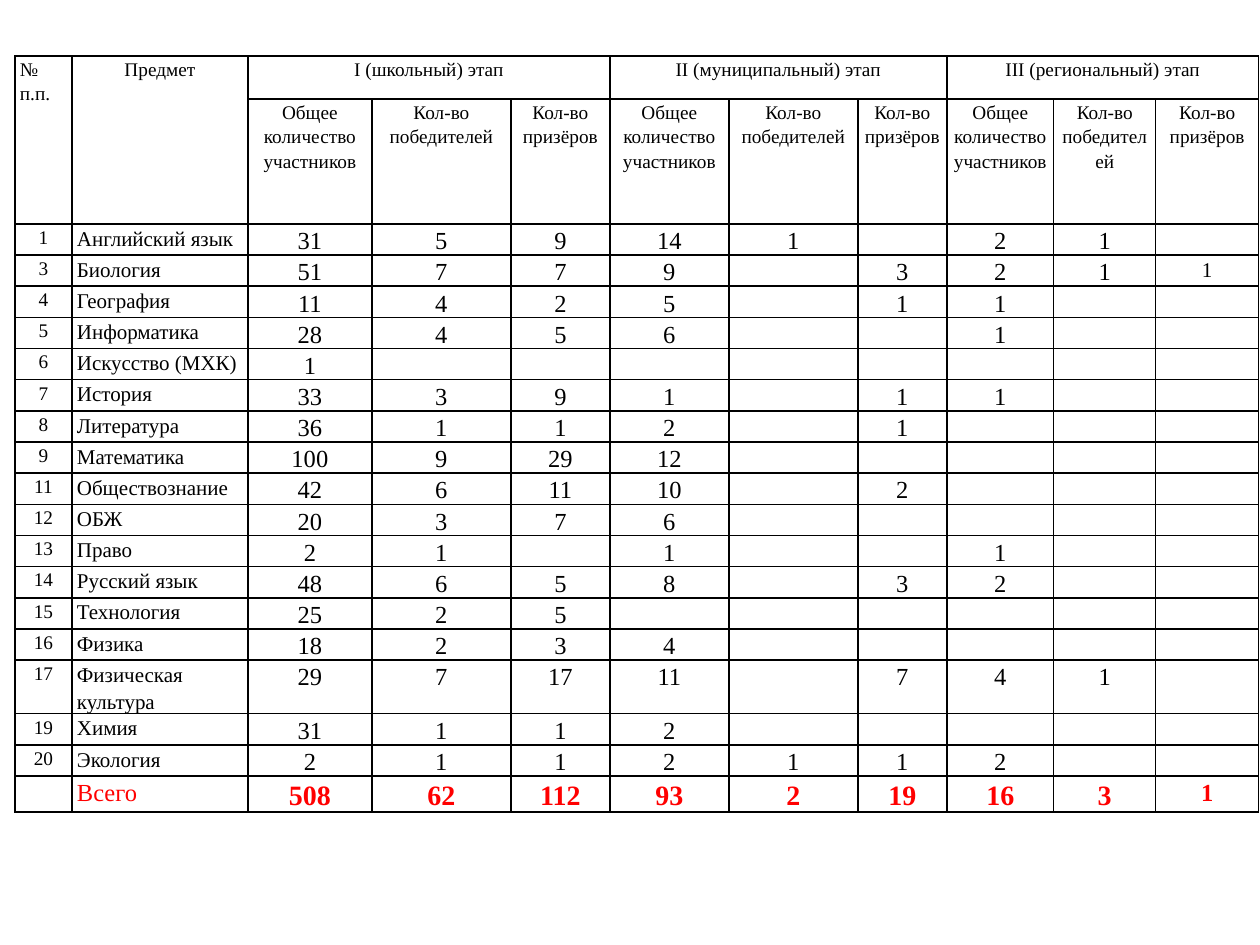
from lxml import etree
from pptx import Presentation
from pptx.dml.color import RGBColor
from pptx.enum.text import MSO_ANCHOR, PP_ALIGN
from pptx.oxml.ns import qn
from pptx.util import Pt

CENTER = PP_ALIGN.CENTER
JUSTIFY = PP_ALIGN.JUSTIFY
TOP = MSO_ANCHOR.TOP
BLACK = RGBColor(0, 0, 0)
RED = RGBColor(255, 0, 0)
FONT = "Times New Roman"
PX = 914400 / 126

COLUMN_WIDTHS = [57, 176, 124, 139, 99, 119, 129, 89, 107, 102, 103]
STAGES = ["I (школьный) этап", "II (муниципальный) этап", "III (региональный) этап"]
MEASURES = ["Общее количество участников", "Кол-во победителей", "Кол-во призёров"]
SUBJECTS = [
    ["1", "Английский язык", "31", "5", "9", "14", "1", "", "2", "1", ""],
    ["3", "Биология", "51", "7", "7", "9", "", "3", "2", "1", "1"],
    ["4", "География", "11", "4", "2", "5", "", "1", "1", "", ""],
    ["5", "Информатика", "28", "4", "5", "6", "", "", "1", "", ""],
    ["6", "Искусство (МХК)", "1", "", "", "", "", "", "", "", ""],
    ["7", "История", "33", "3", "9", "1", "", "1", "1", "", ""],
    ["8", "Литература", "36", "1", "1", "2", "", "1", "", "", ""],
    ["9", "Математика", "100", "9", "29", "12", "", "", "", "", ""],
    ["11", "Обществознание", "42", "6", "11", "10", "", "2", "", "", ""],
    ["12", "ОБЖ", "20", "3", "7", "6", "", "", "", "", ""],
    ["13", "Право", "2", "1", "", "1", "", "", "1", "", ""],
    ["14", "Русский язык", "48", "6", "5", "8", "", "3", "2", "", ""],
    ["15", "Технология", "25", "2", "5", "", "", "", "", "", ""],
    ["16", "Физика", "18", "2", "3", "4", "", "", "", "", ""],
    ["17", "Физическая культура", "29", "7", "17", "11", "", "7", "4", "1", ""],
    ["19", "Химия", "31", "1", "1", "2", "", "", "", "", ""],
    ["20", "Экология", "2", "1", "1", "2", "1", "1", "2", "", ""],
]
TOTALS = ["", "Всего", "508", "62", "112", "93", "2", "19", "16", "3", "1"]
ROW_HEIGHTS = [43, 125] + [53 if row[0] == "17" else 31 for row in SUBJECTS] + [36]

CELL_FORMAT = {
    "margin_left": round(5 * PX),
    "margin_right": round(5 * PX),
    "margin_top": 0,
    "margin_bottom": 0,
    "vertical_anchor": TOP,
}
PARAGRAPH_FORMAT = {"line_spacing": 1.15, "space_after": Pt(6)}


def px(length):
    return round(length * PX)


def apply_format(target, values):
    for name, value in values.items():
        setattr(target, name, value)


def add_borders(cell):
    properties = cell._tc.get_or_add_tcPr()
    for side in ("a:lnL", "a:lnR", "a:lnT", "a:lnB"):
        line = etree.SubElement(properties, qn(side), w=str(Pt(1)))
        fill = etree.SubElement(line, qn("a:solidFill"))
        etree.SubElement(fill, qn("a:srgbClr"), val=str(BLACK))


def write_cell(cell, text, size=11, align=CENTER, color=BLACK, bold=False):
    paragraph = cell.text_frame.paragraphs[0]
    apply_format(paragraph, {**PARAGRAPH_FORMAT, "alignment": align})
    if text:
        run = paragraph.add_run()
        run.text = text
        apply_format(run.font, {"name": FONT, "size": Pt(size), "bold": bold})
        run.font.color.rgb = color
    else:
        paragraph._p.get_or_add_endParaRPr().set("sz", "1100")


def add_grid(slide):
    frame = slide.shapes.add_table(
        len(ROW_HEIGHTS), len(COLUMN_WIDTHS),
        px(15), px(56), px(sum(COLUMN_WIDTHS)), px(sum(ROW_HEIGHTS)))
    table = frame.table
    apply_format(table, {"first_row": False, "horz_banding": False})
    for column, width in zip(table.columns, COLUMN_WIDTHS):
        column.width = px(width)
    for row, height in zip(table.rows, ROW_HEIGHTS):
        row.height = px(height)
    for cell in table.iter_cells():
        apply_format(cell, CELL_FORMAT)
        add_borders(cell)
        cell.fill.background()
    return table


def fill_header(table):
    for column, (title, align) in enumerate([("№ п.п.", JUSTIFY), ("Предмет", CENTER)]):
        table.cell(0, column).merge(table.cell(1, column))
        write_cell(table.cell(0, column), title, align=align)
        write_cell(table.cell(1, column), "")
    for index, stage in enumerate(STAGES):
        first = 2 + index * len(MEASURES)
        table.cell(0, first).merge(table.cell(0, first + len(MEASURES) - 1))
        for offset, measure in enumerate(MEASURES):
            write_cell(table.cell(0, first + offset), "" if offset else stage)
            write_cell(table.cell(1, first + offset), measure)


def fill_row(table, row, values, sizes, color=BLACK, bold_counts=False):
    for column, (text, size) in enumerate(zip(values, sizes)):
        align = JUSTIFY if column == 1 else CENTER
        write_cell(table.cell(row, column), text, size, align, color,
                   bold_counts and column > 1)


def main():
    presentation = Presentation()
    presentation.slide_width = px(1260)
    presentation.slide_height = px(945)
    slide = presentation.slides.add_slide(presentation.slide_layouts[6])
    table = add_grid(slide)
    fill_header(table)
    for row, values in enumerate(SUBJECTS, start=2):
        fill_row(table, row, values, [11, 12] + [14] * 8 + [12])
    fill_row(table, len(ROW_HEIGHTS) - 1, TOTALS, [11, 14] + [16] * 8 + [14], RED, True)
    presentation.save("out.pptx")


if __name__ == "__main__":
    main()
